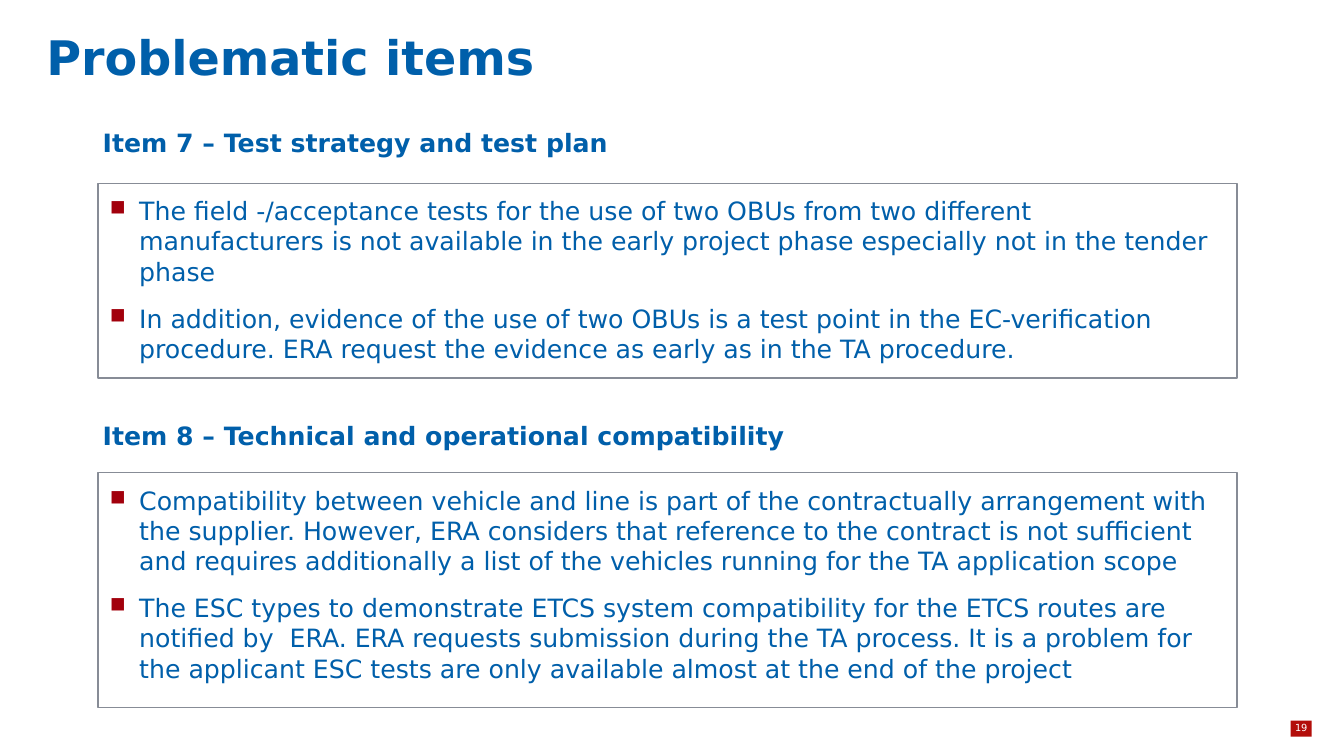
from dataclasses import dataclass

from lxml.etree import SubElement as Sub
from pptx import Presentation
from pptx.dml.color import RGBColor
from pptx.enum.shapes import MSO_SHAPE as Shape
from pptx.enum.text import MSO_ANCHOR as Anchor, MSO_AUTO_SIZE as Fit, PP_ALIGN as Align
from pptx.oxml.ns import qn
from pptx.util import Inches, Pt

BLUE = RGBColor(0x00, 0x5F, 0xAA)
GREY = RGBColor(0x87, 0x8C, 0x96)
RED = RGBColor(0xB3, 0x0E, 0x0A)
WHITE = RGBColor(0xFF, 0xFF, 0xFF)
MARK = RGBColor(0xA2, 0x00, 0x0C)
FONT = "DejaVu Sans"

WIDE, HIGH = Inches(13.33), Inches(7.5)
HEAD_X, HEAD_W, HEAD_H = 6.9, 53.2, 5.33
BOX_X, BOX_W = 7.28, 84.77


@dataclass
class Item:
    """One headed box; tops and height in percent of slide height."""
    head: str
    head_y: float
    box_y: float
    box_h: float
    points: list[str]


ITEMS = [
    Item("Item 7 – Test strategy and test plan", 16.13, 24.27, 25.73, [
        "The field -/acceptance tests for the use of two OBUs from two different "
        "manufacturers is not available in the early project phase especially not "
        "in the tender phase",
        "In addition, evidence of the use of two OBUs is a test point in the "
        "EC-verification procedure. ERA request the evidence as early as in the "
        "TA procedure.",
    ]),
    Item("Item 8 – Technical and operational compatibility", 54.93, 62.53, 31.07, [
        "Compatibility between vehicle and line is part of the contractually "
        "arrangement with the supplier. However, ERA considers that reference to "
        "the contract is not sufficient and requires additionally a list of the "
        "vehicles running for the TA application scope",
        "The ESC types to demonstrate ETCS system compatibility for the ETCS routes "
        "are notified by  ERA. ERA requests submission during the TA process. It is "
        "a problem for the applicant ESC tests are only available almost at the end "
        "of the project",
    ]),
]


def area(x: float, y: float, w: float, h: float) -> tuple[int, int, int, int]:
    """Turn percentages of the slide into a left, top, width, height tuple."""
    return (int(WIDE * x / 100), int(HIGH * y / 100),
            int(WIDE * w / 100), int(HIGH * h / 100))


def bullet(para) -> None:
    """Give a paragraph a hanging red square."""
    props = para._p.get_or_add_pPr()
    props.set("marL", str(Inches(0.29)))
    props.set("indent", str(-Inches(0.29)))
    tint = Sub(props, qn("a:buClr"))
    Sub(tint, qn("a:srgbClr"), val=str(MARK))
    Sub(props, qn("a:buSzPct"), val="85000")
    Sub(props, qn("a:buChar"), char="■")


def write(frame, *lines: str, size: float = 18, color: RGBColor = BLUE,
          bold: bool = False, align=Align.LEFT, after: float = 0,
          marks: bool = False, fit=Fit.NONE) -> None:
    """Fill a text frame, one paragraph for each line."""
    frame.word_wrap = True
    frame.auto_size = fit
    frame.vertical_anchor = Anchor.TOP
    for n, line in enumerate(lines):
        para = frame.add_paragraph() if n else frame.paragraphs[0]
        if marks:
            bullet(para)
            para.level = 1
        para.alignment = align
        para.space_before, para.space_after = Pt(0), Pt(after)
        run = para.add_run()
        run.text = line
        font = run.font
        font.name, font.size, font.bold = FONT, Pt(size), bold
        font.color.rgb = color


def draw(slide, item: Item) -> None:
    """Draw a heading and its framed list."""
    head = slide.shapes.add_textbox(*area(HEAD_X, item.head_y, HEAD_W, HEAD_H))
    write(head.text_frame, item.head, bold=True, fit=Fit.SHAPE_TO_FIT_TEXT)

    box = slide.shapes.add_shape(
        Shape.RECTANGLE, *area(BOX_X, item.box_y, BOX_W, item.box_h))
    box.shadow.inherit = False
    box.fill.background()
    box.line.color.rgb, box.line.width = GREY, Pt(1)
    frame = box.text_frame
    frame.margin_left = frame.margin_top = frame.margin_bottom = Inches(0.12)
    frame.margin_right = Inches(0.24)
    write(frame, *item.points, after=12, marks=True)


def main() -> None:
    deck = Presentation()
    deck.slide_width, deck.slide_height = WIDE, HIGH
    slide = deck.slides.add_slide(deck.slide_layouts.get_by_name("Title Only"))

    # Title
    title = slide.shapes.title
    title.left, title.top, title.width, title.height = area(2.7, 3.07, 75.77, 11.33)
    write(title.text_frame, "Problematic items", size=34, bold=True)

    # Headed boxes
    for item in ITEMS:
        draw(slide, item)

    # Page number on its red badge
    badge = slide.shapes.add_shape(Shape.RECTANGLE, *area(96.02, 95.33, 1.58, 2.13))
    badge.shadow.inherit = False
    badge.fill.solid()
    badge.fill.fore_color.rgb = RED
    badge.line.fill.background()
    page = slide.shapes.add_textbox(*area(94.45, 94.8, 4.73, 6.93))
    write(page.text_frame, "19", size=7, color=WHITE, align=Align.CENTER)

    deck.save("out.pptx")


if __name__ == "__main__":
    main()
